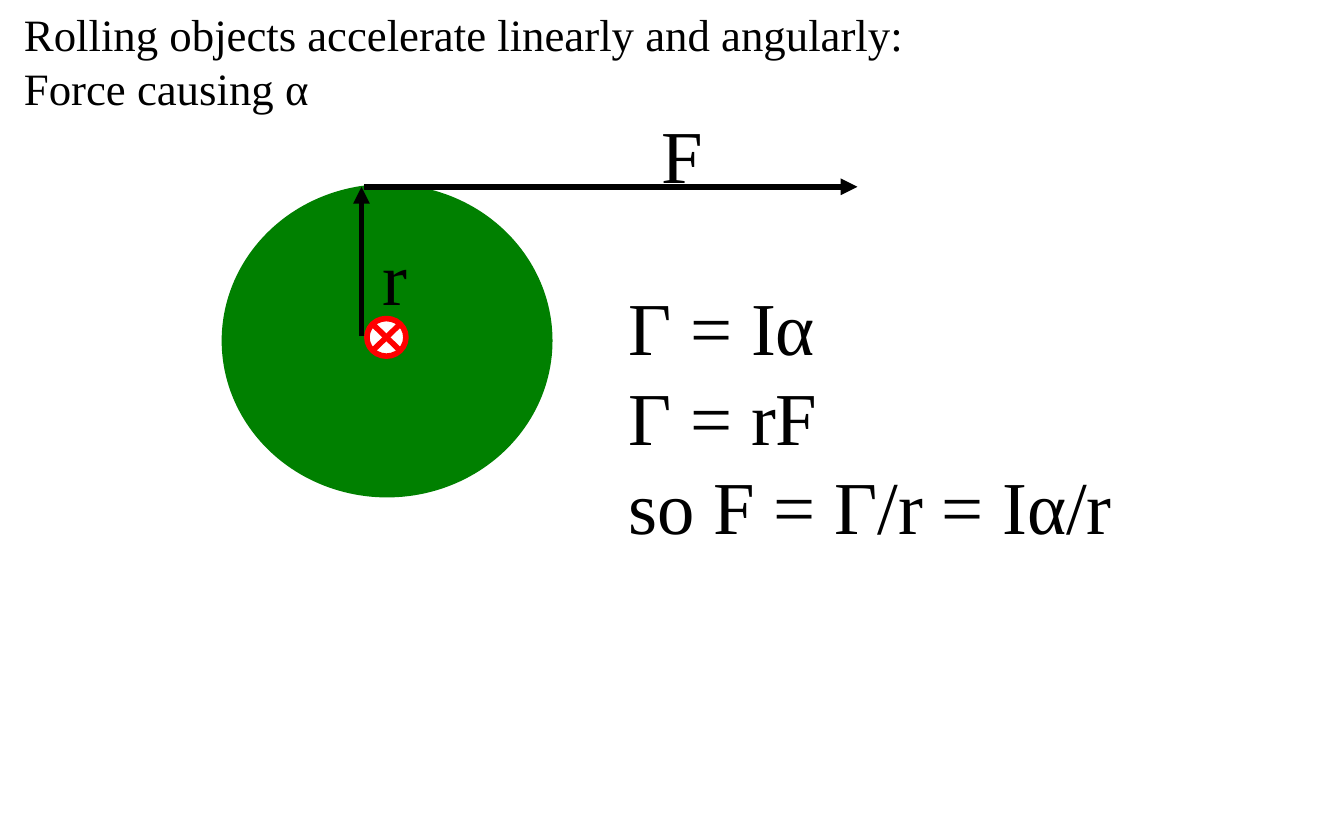
from pptx import Presentation
from pptx.dml.color import RGBColor
from pptx.enum.shapes import MSO_CONNECTOR as Conn, MSO_SHAPE as Kind
from pptx.enum.text import MSO_AUTO_SIZE as Fit
from pptx.oxml.ns import qn
from pptx.util import Inches, Pt
from lxml.etree import SubElement as Sub

FONT = "Times New Roman"
BLACK = "000000"
WHITE = "FFFFFF"
GREEN = "008000"
RED = "FF0000"


def paint(color, hue):
    color.rgb = RGBColor.from_string(hue)


def stroke(line, hue):
    line.fill.solid()
    paint(line.fill.fore_color, hue)
    line.width = Pt(3)


def disc(slide, kind, box, fill, edge):
    shape = slide.shapes.add_shape(kind, *map(Inches, box))
    shape.shadow.inherit = False
    shape.fill.solid()
    paint(shape.fill.fore_color, fill)
    stroke(shape.line, edge)


def arrow(slide, start, end):
    line = slide.shapes.add_connector(Conn.STRAIGHT, *map(Inches, start + end))
    stroke(line.line, BLACK)
    props = line._element.spPr
    Sub(props.find(qn("a:ln")), qn("a:tailEnd"), type="triangle")
    Sub(props, qn("a:effectLst"))


def label(slide, box, lines, size, wrap=False):
    frame = slide.shapes.add_textbox(*map(Inches, box)).text_frame
    frame.word_wrap = wrap
    frame.auto_size = Fit.SHAPE_TO_FIT_TEXT
    frame.text = "\n".join(lines)
    for para in frame.paragraphs:
        para.font.name = FONT
        para.font.size = Pt(size)
        paint(para.font.color, BLACK)


def main():
    deck = Presentation()
    deck.slide_width, deck.slide_height = Inches(10), Inches(6.25)
    slide = deck.slides.add_slide(deck.slide_layouts[6])

    disc(slide, Kind.OVAL, (1.67, 1.39, 2.42, 2.29), GREEN, GREEN)
    disc(slide, Kind.FLOWCHART_SUMMING_JUNCTION, (2.73, 2.37, 0.29, 0.28), WHITE, RED)

    arrow(slide, (2.71, 1.39), (6.38, 1.39))
    label(slide, (4.82, 0.76, 0.51, 0.77), ["F"], 40)
    arrow(slide, (2.69, 2.5), (2.69, 1.39))
    label(slide, (2.75, 1.67, 0.39, 0.77), ["r"], 40)

    title = ["Rolling objects accelerate linearly and angularly:", "Force causing α"]
    label(slide, (0.08, 0, 6.8, 0.91), title, 24)
    steps = ["Γ = Iα", "Γ = rF", "so F = Γ/r = Iα/r"]
    label(slide, (4.58, 2.04, 4.33, 2.12), steps, 40, True)

    deck.save("out.pptx")


if __name__ == "__main__":
    main()
